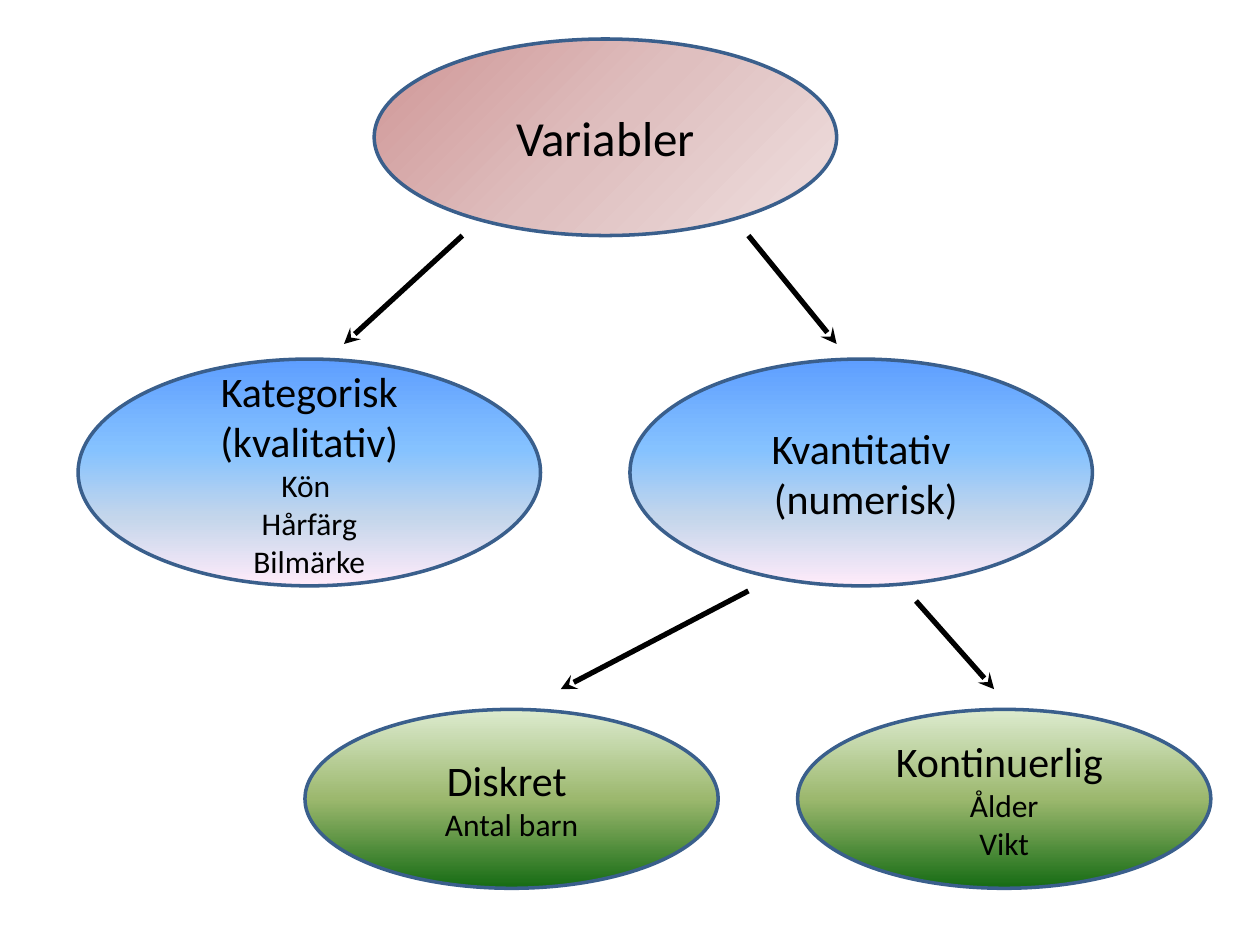
from typing import NamedTuple

import pptx
import pptx.dml.color
import pptx.enum.shapes
import pptx.enum.text
import pptx.oxml
import pptx.oxml.ns
import pptx.util
from pptx.util import Inches

FONT = "Calibri"
BLACK = "000000"
OUTLINE = "3A5F8C"
NODE_WIDTH = 3.67
LEAF_WIDTH = 3.28


class Gradient(NamedTuple):
    stops: tuple[tuple[int, str], ...]
    clockwise_angle: int


class Line(NamedTuple):
    text: str
    size: int


class Node(NamedTuple):
    left: float
    top: float
    width: float
    height: float
    gradient: Gradient
    lines: tuple[Line, ...]


class Arrow(NamedTuple):
    start: tuple[float, float]
    end: tuple[float, float]


ROSE = Gradient(((0, "CF9595"), (50, "DFBFBF"), (100, "EFE0E0")), 45)
BLUE = Gradient(((0, "5E9EFF"), (40, "85C2FF"), (70, "C4D6EB"), (100, "FFEBFA")), 90)
GREEN = Gradient(((0, "DDEBCF"), (50, "9CB86E"), (100, "156B13")), 90)

ROOT = Node(2.97, 0.31, NODE_WIDTH, 1.56, ROSE, (Line("Variabler", 28),))
BRANCHES = (
    Node(0.62, 2.85, NODE_WIDTH, 1.8, BLUE, (
        Line("Kategorisk (kvalitativ)", 24),
        Line("Kön ", 18),
        Line("Hårfärg", 18),
        Line("Bilmärke", 18),
    )),
    Node(5, 2.85, NODE_WIDTH, 1.8, BLUE, (
        Line("Kvantitativ", 24),
        Line(" (numerisk)", 24),
    )),
)
LEAVES = (
    Node(2.42, 5.63, LEAF_WIDTH, 1.42, GREEN, (
        Line("Diskret ", 24),
        Line("Antal barn", 18),
    )),
    Node(6.33, 5.63, LEAF_WIDTH, 1.42, GREEN, (
        Line("Kontinuerlig ", 24),
        Line("Ålder", 18),
        Line("Vikt", 18),
    )),
)
ARROWS = (
    Arrow((3.67, 1.87), (2.73, 2.73)),
    Arrow((5.94, 1.87), (6.64, 2.73)),
    Arrow((5.94, 4.69), (4.45, 5.47)),
    Arrow((7.27, 4.77), (7.89, 5.47)),
)


def color(value: str) -> pptx.dml.color.RGBColor:
    return pptx.dml.color.RGBColor.from_string(value)


def apply_gradient(shape, gradient: Gradient) -> None:
    shape.fill.gradient()
    shape.fill.gradient_angle = 360 - gradient.clockwise_angle
    stop_list = shape.element.spPr.find(".//" + pptx.oxml.ns.qn("a:gsLst"))
    stop_list.clear()
    for percent, value in gradient.stops:
        stop_list.append(pptx.oxml.parse_xml(
            f'<a:gs {pptx.oxml.ns.nsdecls("a")} pos="{percent * 1000}">'
            f'<a:srgbClr val="{value}"/></a:gs>'
        ))


def draw_node(slide, node: Node) -> None:
    shape = slide.shapes.add_shape(
        pptx.enum.shapes.MSO_SHAPE.OVAL,
        Inches(node.left), Inches(node.top), Inches(node.width), Inches(node.height),
    )
    shape.shadow.inherit = False
    apply_gradient(shape, node.gradient)
    shape.line.color.rgb = color(OUTLINE)
    shape.line.width = pptx.util.Pt(2)
    box = shape.text_frame
    box.word_wrap = True
    box.vertical_anchor = pptx.enum.text.MSO_ANCHOR.MIDDLE
    for index, line in enumerate(node.lines):
        para = box.add_paragraph() if index else box.paragraphs[0]
        para.alignment = pptx.enum.text.PP_ALIGN.CENTER
        span = para.add_run()
        span.text = line.text
        span.font.name = FONT
        span.font.size = pptx.util.Pt(line.size)
        span.font.color.rgb = color(BLACK)


def draw_arrow(slide, arrow: Arrow) -> None:
    connector = slide.shapes.add_connector(
        pptx.enum.shapes.MSO_CONNECTOR.STRAIGHT,
        *map(Inches, arrow.start + arrow.end),
    )
    connector.line.color.rgb = color(BLACK)
    connector.line.width = pptx.util.Pt(3)
    namespace = pptx.oxml.ns.nsdecls("a")
    properties = connector.element.spPr
    properties.find(pptx.oxml.ns.qn("a:ln")).append(
        pptx.oxml.parse_xml(f'<a:tailEnd {namespace} type="stealth"/>')
    )
    properties.append(pptx.oxml.parse_xml(f"<a:effectLst {namespace}/>"))


def main() -> None:
    deck = pptx.Presentation()
    deck.slide_width = Inches(10)
    deck.slide_height = Inches(7.5)
    page = deck.slides.add_slide(deck.slide_layouts[6])
    for node in BRANCHES + LEAVES:
        draw_node(page, node)
    for arrow in ARROWS:
        draw_arrow(page, arrow)
    draw_node(page, ROOT)
    deck.save("out.pptx")


if __name__ == "__main__":
    main()
